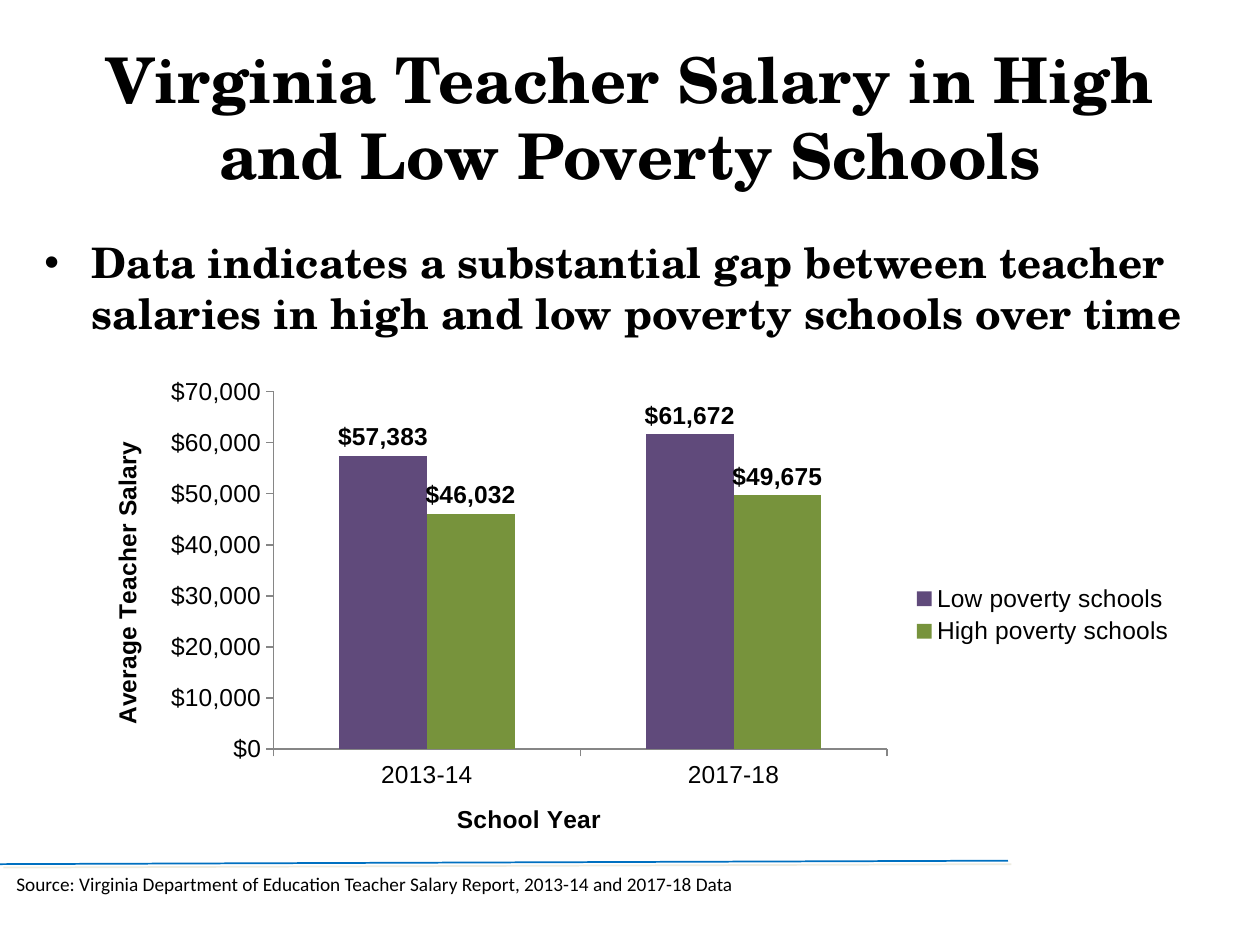
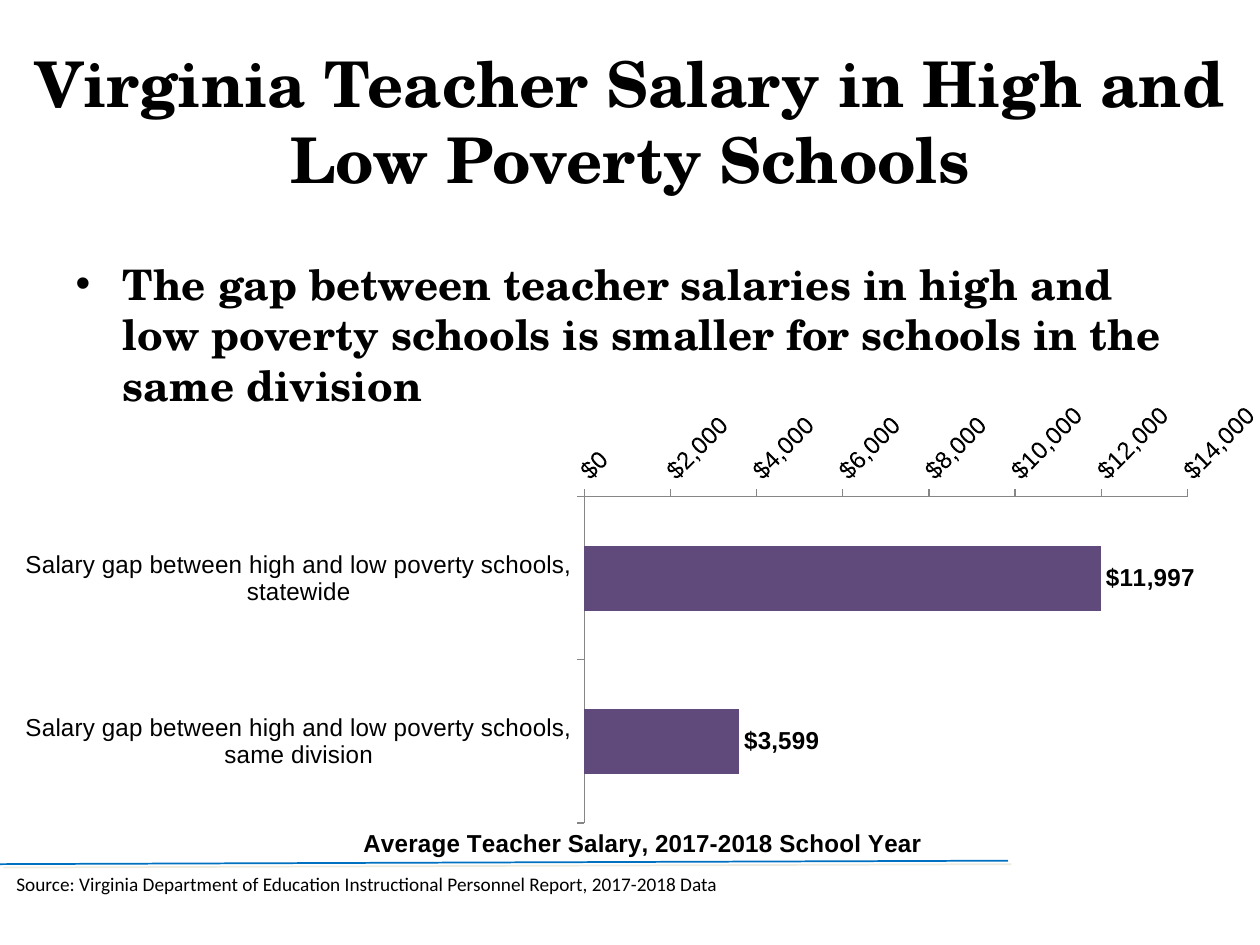
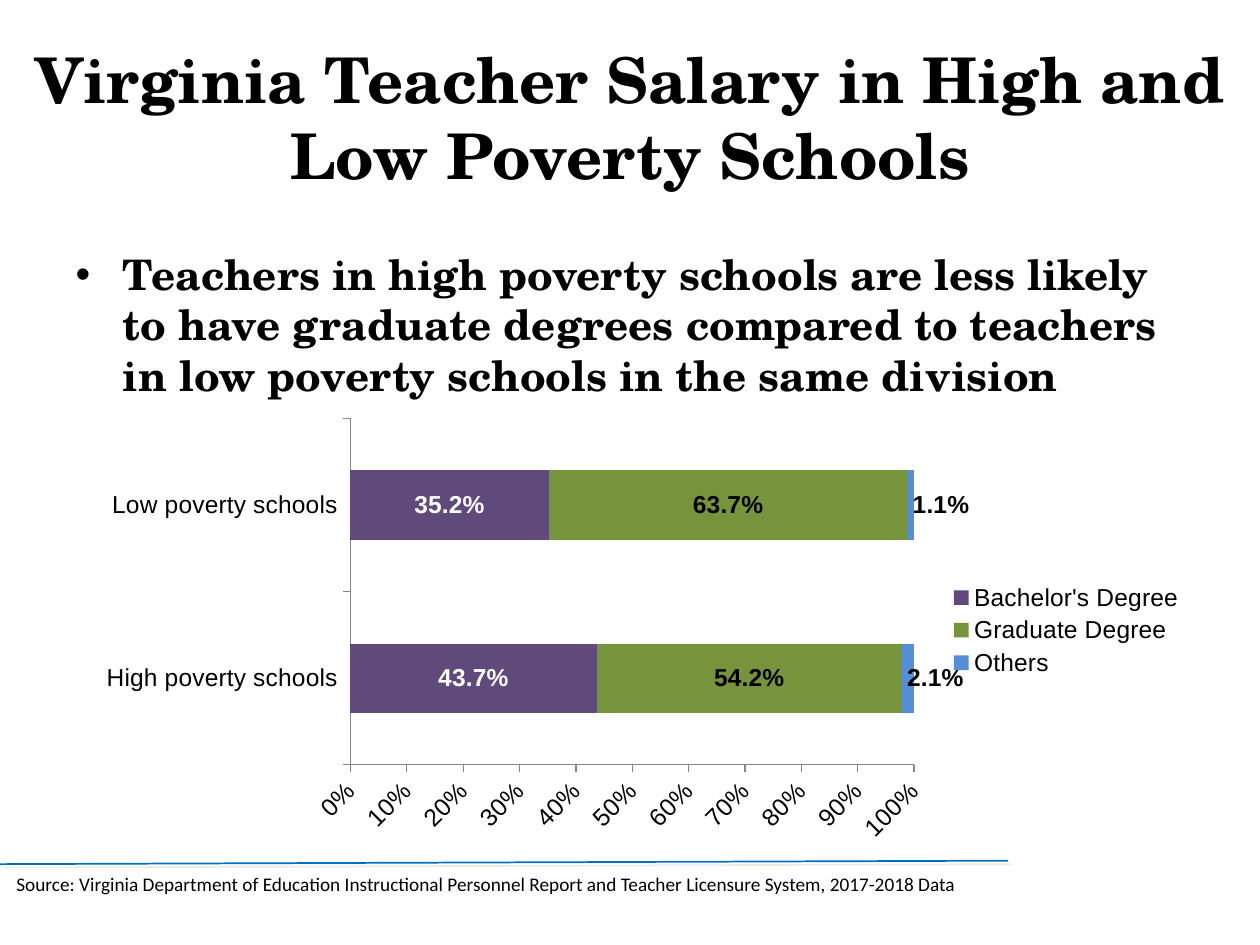
from pptx import Presentation
from pptx.chart.data import CategoryChartData
from pptx.dml.color import RGBColor
from pptx.enum.chart import (XL_CHART_TYPE, XL_LABEL_POSITION, XL_LEGEND_POSITION,
                             XL_TICK_MARK)
from pptx.enum.shapes import MSO_CONNECTOR
from pptx.enum.text import MSO_ANCHOR, MSO_AUTO_SIZE, PP_ALIGN
from pptx.oxml import parse_xml
from pptx.oxml.ns import nsdecls, qn
from pptx.util import Cm, Pt

BLACK = RGBColor(0x00, 0x00, 0x00)
WHITE = RGBColor(0xFF, 0xFF, 0xFF)
GRAY = RGBColor(0x86, 0x86, 0x86)
RULE_BLUE = RGBColor(0x00, 0x70, 0xC0)
RULE_SHADOW = RGBColor(0xEE, 0xEC, 0xE1)
PURPLE = RGBColor(0x60, 0x4A, 0x7B)
GREEN = RGBColor(0x77, 0x93, 0x3C)
SKY = RGBColor(0x55, 0x8E, 0xD5)

HEADING_FONT = "TeX Gyre Schola"
CHART_FONT = "Arial"
SOURCE_FONT = "Calibri"
DOLLARS = '"$"#,##0'
TITLE = "Virginia Teacher Salary in High and Low Poverty Schools"
SLANTED = "-2700000"


def set_font(font, name, size, color=BLACK, bold=False):
    """Apply name, size, colour and weight to a font."""
    font.name = name
    font.size = Pt(size)
    font.color.rgb = color
    font.bold = bold


def place(shape, box):
    """Move a shape to a left, top, width, height box in centimetres."""
    shape.left, shape.top, shape.width, shape.height = map(Cm, box)


def fill_placeholder(placeholder, text, box, size):
    """Position a placeholder and write one bold heading paragraph in it."""
    place(placeholder, box)
    frame = placeholder.text_frame
    frame.text = text
    frame.auto_size = MSO_AUTO_SIZE.NONE
    paragraph = frame.paragraphs[0]
    set_font(paragraph.runs[0].font, HEADING_FONT, size, bold=True)
    return paragraph


def add_footer_rule(slide):
    """Draw the blue rule with its soft offset shadow above the source."""
    rule = slide.shapes.add_connector(
        MSO_CONNECTOR.STRAIGHT, Cm(20.32), Cm(17.35), Cm(0), Cm(17.42))
    rule.line.color.rgb = RULE_BLUE
    rule.line.width = Pt(1)
    rule._element.spPr.append(parse_xml(
        f'<a:effectLst {nsdecls("a")}>'
        f'<a:outerShdw dist="{Pt(2.8)}" dir="2700000">'
        f'<a:srgbClr val="{RULE_SHADOW}"/></a:outerShdw></a:effectLst>'))


def add_source(slide, text, width):
    """Write the source line at the foot of the slide."""
    source = slide.shapes.add_textbox(Cm(0.08), Cm(17.45), Cm(width), Cm(0.74))
    frame = source.text_frame
    frame.text = text
    frame.word_wrap = False
    frame.auto_size = MSO_AUTO_SIZE.SHAPE_TO_FIT_TEXT
    set_font(frame.paragraphs[0].runs[0].font, SOURCE_FONT, 11)


def add_finding_slide(deck, title_box, finding, finding_box, source, source_width):
    """Add a slide with title, finding, footer rule and source."""
    slide = deck.slides.add_slide(deck.slide_layouts[1])
    add_footer_rule(slide)
    heading = fill_placeholder(slide.shapes.title, TITLE, title_box, 36)
    heading.alignment = PP_ALIGN.CENTER
    slide.shapes.title.text_frame.vertical_anchor = MSO_ANCHOR.MIDDLE
    fill_placeholder(slide.placeholders[1], finding, finding_box, 24)
    add_source(slide, source, source_width)
    return slide


def style_axis(axis, title=None):
    """Give an axis gray lines, outside ticks and an optional bold title."""
    axis.has_major_gridlines = False
    axis.major_tick_mark = XL_TICK_MARK.OUTSIDE
    axis.minor_tick_mark = XL_TICK_MARK.NONE
    axis.format.line.color.rgb = GRAY
    set_font(axis.tick_labels.font, CHART_FONT, 14)
    axis.has_title = title is not None
    if title:
        frame = axis.axis_title.text_frame
        frame.text = title
        set_font(frame.paragraphs[0].runs[0].font, CHART_FONT, 14, bold=True)


def scale_axis(axis, maximum, step, number_format):
    """Set the range, step and number format of a value axis."""
    axis.minimum_scale = 0
    axis.maximum_scale = maximum
    axis.major_unit = step
    axis.tick_labels.number_format = number_format
    axis.tick_labels.number_format_is_linked = False


def slant_labels(axis):
    """Turn the tick labels of an axis by 45 degrees."""
    axis._element.txPr.bodyPr.set("rot", SLANTED)


def style_series(series, color, number_format, position, label_color=BLACK):
    """Colour a series and show its values in bold."""
    series.format.fill.solid()
    series.format.fill.fore_color.rgb = color
    series.invert_if_negative = False
    labels = series.data_labels
    labels.show_value = True
    labels.number_format = number_format
    labels.number_format_is_linked = False
    labels.position = position
    set_font(labels.font, CHART_FONT, 14, label_color, bold=True)


def add_bars(slide, kind, box, categories, series_values, has_legend=True):
    """Add a bar or column chart with the common font, gap and legend."""
    chart_data = CategoryChartData()
    chart_data.categories = categories
    for name, values in series_values.items():
        chart_data.add_series(name, values)
    chart = slide.shapes.add_chart(kind, *map(Cm, box), chart_data).chart
    set_font(chart.font, CHART_FONT, 14)
    chart.has_title = False
    chart.has_legend = has_legend
    if has_legend:
        chart.legend.position = XL_LEGEND_POSITION.RIGHT
        chart.legend.include_in_layout = False
    plot = chart.plots[0]
    plot.gap_width = 150
    plot.vary_by_categories = False
    return chart


def fix_plot_area(chart, x, y, w, h):
    """Fix the inner plot area as fractions of the chart."""
    plot_area = chart._chartSpace.chart.plotArea
    for layout in plot_area.findall(qn("c:layout")):
        plot_area.remove(layout)
    plot_area.insert(0, parse_xml(
        f'<c:layout {nsdecls("c")}><c:manualLayout><c:layoutTarget val="inner"/>'
        '<c:xMode val="edge"/><c:yMode val="edge"/>'
        f'<c:x val="{x}"/><c:y val="{y}"/><c:w val="{w}"/><c:h val="{h}"/>'
        '</c:manualLayout></c:layout>'))


def add_salary_chart(slide):
    """Compare average salaries by school year."""
    chart = add_bars(
        slide, XL_CHART_TYPE.COLUMN_CLUSTERED, (1.7, 7.42, 22.23, 9.96),
        ["2013-14", "2017-18"],
        {"Low poverty schools": (57383, 61672),
         "High poverty schools": (46032, 49675)})
    style_axis(chart.category_axis, "School Year")
    style_axis(chart.value_axis, "Average Teacher Salary")
    scale_axis(chart.value_axis, 70000, 10000, DOLLARS)
    for series, color in zip(chart.plots[0].series, (PURPLE, GREEN)):
        style_series(series, color, DOLLARS, XL_LABEL_POSITION.OUTSIDE_END)


def add_gap_chart(slide):
    """Compare the salary gap statewide and within a division."""
    gap = "Salary gap between high and low poverty schools, "
    chart = add_bars(
        slide, XL_CHART_TYPE.BAR_CLUSTERED, (0.48, 7.92, 24.92, 9.53),
        [gap + "statewide", gap + "same division"],
        {"Series 1": (11997, 3599)}, has_legend=False)
    style_axis(chart.category_axis)
    chart.category_axis.reverse_order = True
    style_axis(chart.value_axis, "Average Teacher Salary, 2017-2018 School Year")
    scale_axis(chart.value_axis, 14000, 2000, DOLLARS)
    slant_labels(chart.value_axis)
    fix_plot_area(chart, 0.46, 0.22, 0.495, 0.69)
    style_series(chart.plots[0].series[0], PURPLE, DOLLARS,
                 XL_LABEL_POSITION.OUTSIDE_END)


def add_degree_chart(slide):
    """Show the share of degrees by school poverty."""
    chart = add_bars(
        slide, XL_CHART_TYPE.BAR_STACKED, (1.7, 8.26, 22.43, 8.89),
        ["High poverty schools", "Low poverty schools"],
        {"Bachelor's Degree": (0.437, 0.352),
         "Graduate Degree": (0.542, 0.637),
         "Others": (0.021, 0.011)})
    chart.plots[0].overlap = 100
    style_axis(chart.category_axis)
    style_axis(chart.value_axis)
    scale_axis(chart.value_axis, 1, 0.1, "0%")
    slant_labels(chart.value_axis)
    bachelor, graduate, others = chart.plots[0].series
    style_series(bachelor, PURPLE, "0.0%", XL_LABEL_POSITION.CENTER, WHITE)
    style_series(graduate, GREEN, "0.0%", XL_LABEL_POSITION.CENTER)
    style_series(others, SKY, "0.0%", XL_LABEL_POSITION.INSIDE_BASE)


def main():
    """Build and save the three slides."""
    deck = Presentation()
    deck.slide_width, deck.slide_height = Cm(25.4), Cm(19.05)
    department = "Source: Virginia Department of Education "

    salary_slide = add_finding_slide(
        deck, (1.27, 0.76, 22.86, 3.18),
        "Data indicates a substantial gap between teacher salaries in high "
        "and low poverty schools over time",
        (0.64, 4.65, 24.56, 12.37),
        department + "Teacher Salary Report, 2013-14 and 2017-18 Data", 15.21)
    add_salary_chart(salary_slide)

    gap_slide = add_finding_slide(
        deck, (0, 0.84, 25.4, 3.18),
        "The gap between teacher salaries in high and low poverty schools "
        "is smaller for schools in the same division",
        (1.27, 5.08, 22.86, 11.73),
        department + "Instructional Personnel Report, 2017-2018 Data", 14.88)
    add_gap_chart(gap_slide)

    degree_slide = add_finding_slide(
        deck, (0, 0.76, 25.4, 3.18),
        "Teachers in high poverty schools are less likely to have graduate "
        "degrees compared to teachers in low poverty schools in the same division",
        (1.27, 4.88, 22.86, 12.14),
        department + "Instructional Personnel Report and Teacher Licensure "
        "System, 2017-2018 Data", 19.76)
    add_degree_chart(degree_slide)

    deck.save("out.pptx")


if __name__ == "__main__":
    main()
